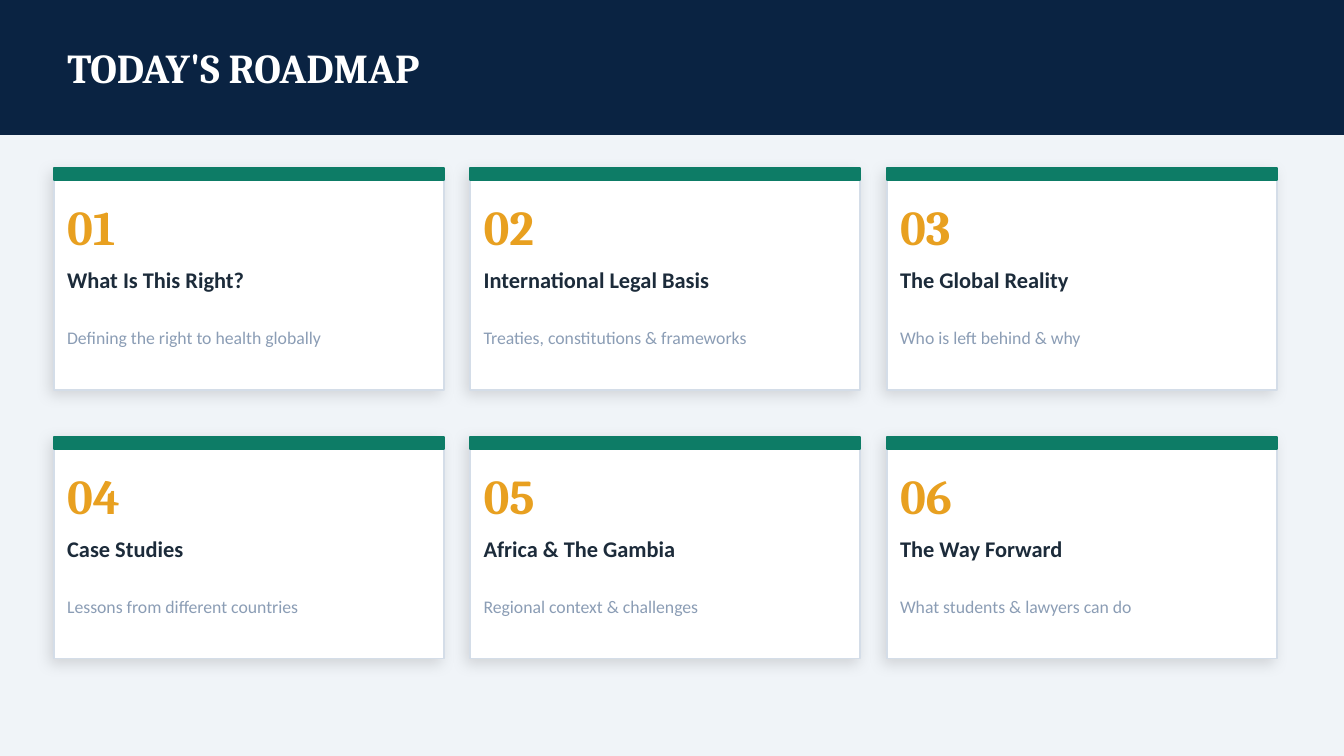
"""Build the roadmap slide: a title band above six numbered topic cards."""
import dataclasses

import pptx
import pptx.dml.color
import pptx.enum.shapes
import pptx.enum.text
import pptx.oxml
import pptx.oxml.ns
import pptx.util
from pptx.util import Cm, Pt


@dataclasses.dataclass(frozen=True)
class Theme:
    background: str = "F0F4F8"
    band: str = "0A2342"
    card: str = "FFFFFF"
    card_line: str = "D4DDE8"
    accent: str = "0D7C66"
    title: tuple = ("FFFFFF", {"name": "Cambria", "size": Pt(22), "bold": True})
    number: tuple = ("E8A020", {"name": "Cambria", "size": Pt(26), "bold": True})
    heading: tuple = ("1C2B3A", {"name": "Calibri", "size": Pt(12), "bold": True})
    detail: tuple = ("8B9DB5", {"name": "Calibri", "size": Pt(9.5), "bold": False})


def add_panel(slide, box, fill, line):
    shape = slide.shapes.add_shape(pptx.enum.shapes.MSO_SHAPE.RECTANGLE, *box)
    shape.shadow.inherit = False
    shape.fill.solid()
    shape.fill.fore_color.rgb = pptx.dml.color.RGBColor.from_string(fill)
    shape.line.color.rgb = pptx.dml.color.RGBColor.from_string(line)
    shape.line.width = Pt(1)
    return shape


def write_text(shape, text, style, margins):
    color, font_format = style
    frame = shape.text_frame
    frame.text = text
    frame_format = {
        "word_wrap": True,
        "auto_size": pptx.enum.text.MSO_AUTO_SIZE.NONE,
        "vertical_anchor": pptx.enum.text.MSO_ANCHOR.MIDDLE,
        **margins,
    }
    for name, value in frame_format.items():
        setattr(frame, name, value)
    paragraph = frame.paragraphs[0]
    paragraph.alignment = pptx.enum.text.PP_ALIGN.LEFT
    font = paragraph.runs[0].font
    for name, value in font_format.items():
        setattr(font, name, value)
    font.color.rgb = pptx.dml.color.RGBColor.from_string(color)


theme = Theme()
presentation = pptx.Presentation()
presentation.slide_width = Cm(25.4)
presentation.slide_height = Cm(14.29)
slide = presentation.slides.add_slide(presentation.slide_layouts[5])
slide.background.fill.solid()
slide.background.fill.fore_color.rgb = pptx.dml.color.RGBColor.from_string(theme.background)

band = add_panel(slide, (0, 0, Cm(25.4), Cm(2.54)), theme.band, theme.band)
title = slide.shapes.title
title.element.addprevious(band.element)
title_place = {"left": Cm(1.02), "top": 0, "width": Cm(22.86), "height": Cm(2.54)}
for name, value in title_place.items():
    setattr(title, name, value)
write_text(title, "TODAY'S ROADMAP", theme.title, {})

topics = [
    ("What Is This Right?", "Defining the right to health globally"),
    ("International Legal Basis", "Treaties, constitutions & frameworks"),
    ("The Global Reality", "Who is left behind & why"),
    ("Case Studies", "Lessons from different countries"),
    ("Africa & The Gambia", "Regional context & challenges"),
    ("The Way Forward", "What students & lawyers can do"),
]
columns = 3
card_width, card_height = Cm(7.37), Cm(4.19)
no_margins = dict.fromkeys(("margin_left", "margin_top", "margin_right", "margin_bottom"), 0)
shadow_xml = (
    f'<a:outerShdw {pptx.oxml.ns.nsdecls("a")} blurRad="{Pt(8)}" dist="{Pt(3)}" '
    'dir="8100000" algn="bl" rotWithShape="0">'
    '<a:srgbClr val="000000"><a:alpha val="12000"/></a:srgbClr></a:outerShdw>'
)

for index, (heading, detail) in enumerate(topics):
    row, column = divmod(index, columns)
    left = Cm(1.02) + column * Cm(7.87)
    top = Cm(3.18) + row * Cm(5.08)

    card = add_panel(slide, (left, top, card_width, card_height), theme.card, theme.card_line)
    effects = card.element.spPr.find(pptx.oxml.ns.qn("a:effectLst"))
    effects.append(pptx.oxml.parse_xml(shadow_xml))
    add_panel(slide, (left, top, card_width, Cm(0.23)), theme.accent, theme.accent)

    lines = [
        (f"{index + 1:02}", theme.number, Cm(0.46), Cm(1.4), Cm(1.27)),
        (heading, theme.heading, Cm(1.57), Cm(6.73), Cm(1.07)),
        (detail, theme.detail, Cm(2.54), Cm(6.73), Cm(1.32)),
    ]
    for text, style, offset, width, height in lines:
        text_box = slide.shapes.add_textbox(left + Cm(0.25), top + offset, width, height)
        write_text(text_box, text, style, no_margins)

presentation.save("out.pptx")
